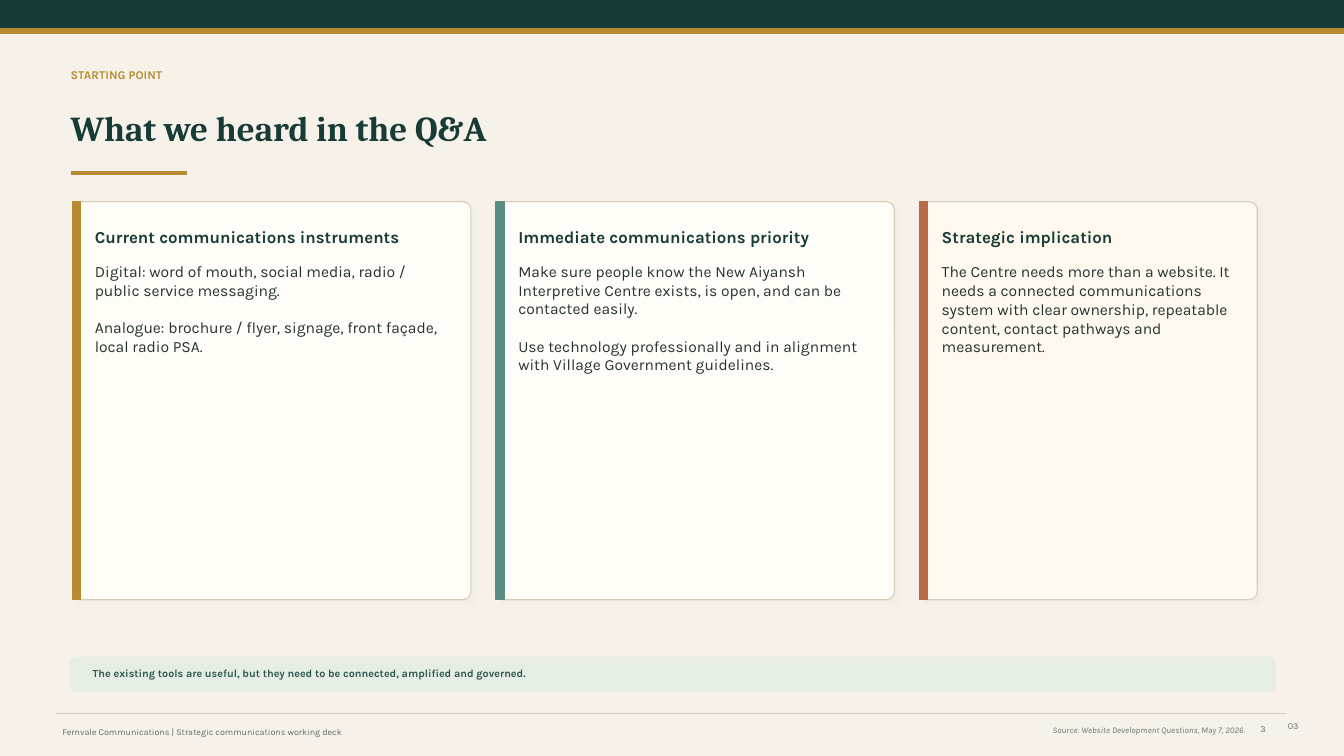
"""Build the slide on what was heard in the Q&A."""
from lxml import etree
from pptx import Presentation
from pptx import util as u
from pptx.dml import color
from pptx.enum import shapes, text
from pptx.oxml import ns

rgb = color.RGBColor.from_string
RECT = shapes.MSO_SHAPE.RECTANGLE
ROUND = shapes.MSO_SHAPE.ROUNDED_RECTANGLE
MID, TOP = text.MSO_ANCHOR.MIDDLE, text.MSO_ANCHOR.TOP
LEFT, RIGHT = text.PP_ALIGN.LEFT, text.PP_ALIGN.RIGHT
GREEN, GOLD, SAND, MINT = "173B35", "B68B32", "D8CCB8", "E6EDE3"
GREY, MUTED = "5F6B63", "66756F"

deck = Presentation()
deck.slide_width, deck.slide_height = u.Inches(13.33), u.Inches(7.5)
slide = deck.slides.add_slide(deck.slide_layouts[5])
slide.background.fill.solid()
slide.background.fill.fore_color.rgb = rgb("F7F2E9")


def block(kind, place, fill, edge=None, width=1, radius=0):
    shape = slide.shapes.add_shape(kind, *map(u.Inches, place))
    shape.shadow.inherit = False
    shape.fill.solid()
    shape.fill.fore_color.rgb = rgb(fill)
    shape.line.color.rgb = rgb(edge or fill)
    shape.line.width = u.Pt(width)
    if radius:
        shape.adjustments[0] = radius / min(place[2:])
    return shape


def write(place, lines, size, hue, bold=False, italic=False, font="Karla",
          anchor=MID, align=LEFT, gap=0, box=None):
    box = box or slide.shapes.add_textbox(0, 0, 0, 0)
    box.left, box.top, box.width, box.height = map(u.Inches, place)
    frame = box.text_frame
    frame.text = "\n".join(lines)
    frame.word_wrap = True
    frame.auto_size = text.MSO_AUTO_SIZE.NONE
    frame.vertical_anchor = anchor
    frame.margin_left = frame.margin_right = 0
    frame.margin_top = frame.margin_bottom = 0
    for i, para in enumerate(frame.paragraphs):
        para.alignment = align
        para.space_before = u.Pt(gap if i else 0)
        for run in para.runs:
            run.font.name, run.font.size = font, u.Pt(size)
            run.font.bold, run.font.italic = bold, italic
            run.font.color.rgb = rgb(hue)


block(RECT, (0, 0, 13.33, 0.28), GREEN)
block(RECT, (0, 0.28, 13.33, 0.05), GOLD)
write((0.7, 0.62, 8.5, 0.24), ["STARTING POINT"], 8.5, GOLD, bold=True)
write((0.7, 0.92, 9.65, 0.68), ["What we heard in the Q&A"], 25, GREEN,
      bold=True, font="Cambria", box=slide.shapes.title)

rules = [(0.7, 1.85, 1.72, GOLD, 3), (0.56, 12.76, 7.08, SAND, 0.5)]
for start, end, y, hue, width in rules:
    rule = slide.shapes.add_connector(
        shapes.MSO_CONNECTOR.STRAIGHT, *map(u.Inches, (start, y, end, y)))
    rule.line.color.rgb = rgb(hue)
    rule.line.width = u.Pt(width)
    etree.SubElement(rule._element.spPr, ns.qn("a:effectLst"))

cards = [
    (3.95, "FFFDF8", GOLD, 11.2, "Current communications instruments",
     ["Digital: word of mouth, social media, radio / public service messaging.",
      "Analogue: brochure / flyer, signage, front façade, local radio PSA."]),
    (3.95, "FFFDF8", "5A8D84", 11.1, "Immediate communications priority",
     ["Make sure people know the New Aiyansh Interpretive Centre exists, "
      "is open, and can be contacted easily.",
      "Use technology professionally and in alignment with Village "
      "Government guidelines."]),
    (3.35, "FFF8EE", "B96B46", 11.2, "Strategic implication",
     ["The Centre needs more than a website. It needs a connected "
      "communications system with clear ownership, repeatable content, "
      "contact pathways and measurement."]),
]
x = 0.72
for wide, fill, hue, size, head, body in cards:
    card = block(ROUND, (x, 2, wide, 3.95), fill, SAND, 0.8, 0.08)
    glow = etree.SubElement(
        card._element.spPr.find(ns.qn("a:effectLst")), ns.qn("a:outerShdw"),
        blurRad=str(u.Pt(1)), dist=str(u.Pt(4)), dir="2700000",
        algn="tl", rotWithShape="0")
    tint = etree.SubElement(glow, ns.qn("a:srgbClr"), val="D7C9B5")
    etree.SubElement(tint, ns.qn("a:alpha"), val="11000")
    block(RECT, (x, 2, 0.08, 3.95), hue)
    inner = wide - 0.44
    write((x + 0.22, 2.18, inner, 0.34), [head], 12, GREEN, bold=True)
    write((x + 0.22, 2.6, inner, 3.23), body, size, "253330",
          anchor=TOP, gap=13.2)
    x += wide + 0.25

block(ROUND, (0.7, 6.52, 11.95, 0.34), MINT, radius=0.06)
write((0.92, 6.62, 11.5, 0.12),
      ["The existing tools are useful, but they need to be connected, "
       "amplified and governed."], 7.7, "2F594D", bold=True)
write((0.62, 7.17, 7.5, 0.18),
      ["Fernvale Communications | Strategic communications working deck"],
      6.4, GREY)
write((9, 7.17, 3.35, 0.15),
      ["Source: Website Development Questions, May 7, 2026."],
      6.2, MUTED, italic=True, align=RIGHT)
write((12.53, 7.13, 0.35, 0.15), ["03"], 6.5, MUTED, align=RIGHT)
write((12.5, 7.18, 0.67, 0.23), ["3"], 6.5, GREY, anchor=TOP)

deck.save("out.pptx")
